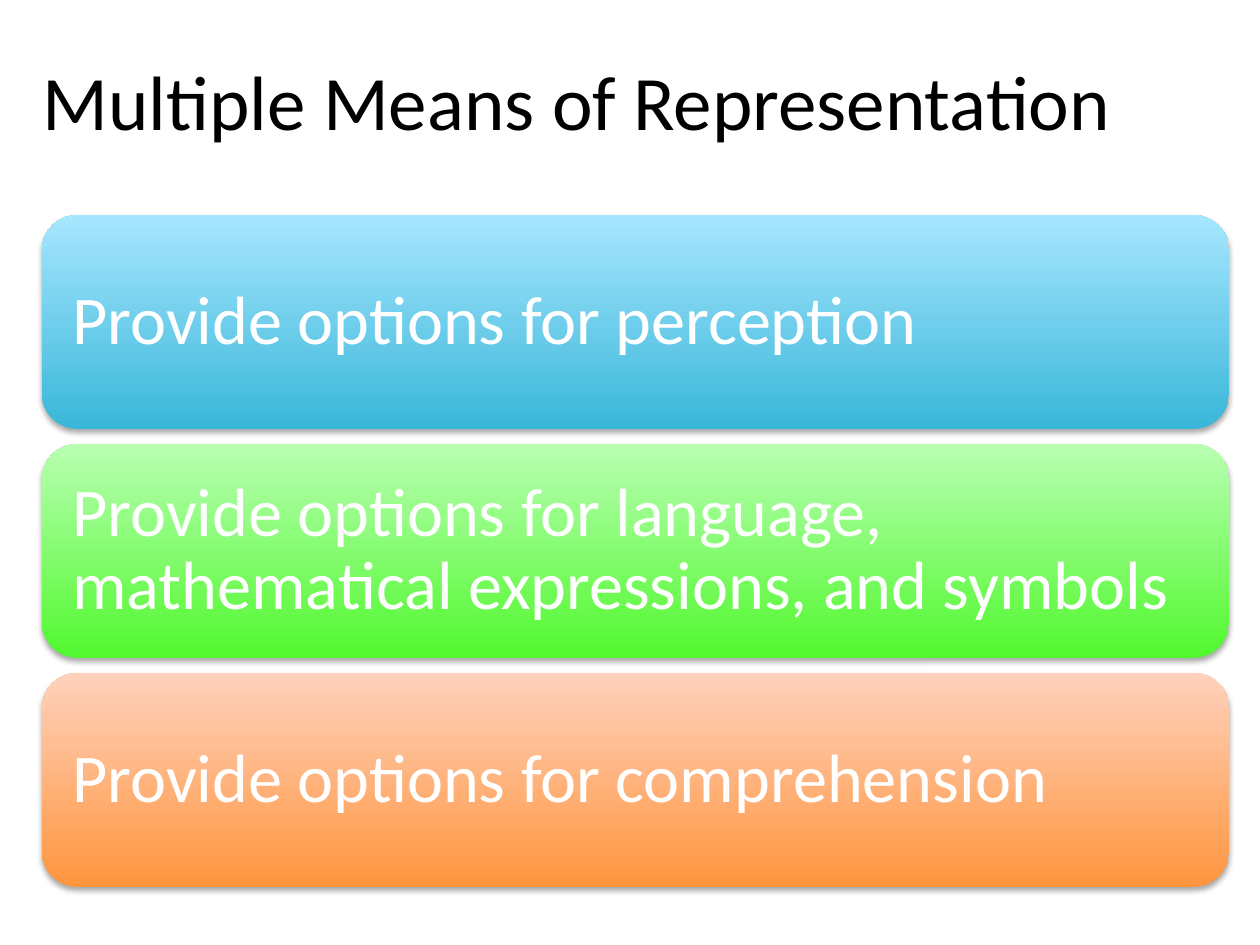
"""Build a slide with a title and three gradient option panels."""
from lxml import etree
from pptx import Presentation
from pptx import util as u
from pptx.dml.color import RGBColor
from pptx.enum import shapes, text
from pptx.oxml.ns import qn

COLORS = {
    "black": "000000",
    "white": "FFFFFF",
    "blue": ("39B7D8", "A7E6FF"),
    "green": ("51F82F", "B9FFB2"),
    "orange": ("FF953E", "FFD2BD"),
}
PANELS = [
    ("Provide options for perception", "blue"),
    ("Provide options for language, mathematical expressions, and symbols", "green"),
    ("Provide options for comprehension", "orange"),
]


def px(n):
    return u.Emu(round(n * 914400 / 126))


class Deck:
    def __init__(self, width, height, font="Calibri"):
        self.prs = Presentation()
        self.prs.slide_width, self.prs.slide_height = px(width), px(height)
        self.s = self.prs.slides.add_slide(self.prs.slide_layouts[5])
        self.font = font

    def set_text(self, tf, words, size, color, align):
        tf.word_wrap = True
        tf.auto_size = text.MSO_AUTO_SIZE.NONE
        tf.vertical_anchor = text.MSO_ANCHOR.MIDDLE
        p = tf.paragraphs[0]
        p.text = words
        p.alignment = align
        p.font.name = self.font
        p.font.size = u.Pt(size)
        p.font.color.rgb = RGBColor.from_string(COLORS[color])
        return p

    def title(self, words, x, y, w, h):
        sp = self.s.shapes.title
        sp.left, sp.top, sp.width, sp.height = map(px, (x, y, w, h))
        self.set_text(sp.text_frame, words, 44, "black", text.PP_ALIGN.CENTER)

    def shadow(self, sp):
        sp.shadow.inherit = False
        effects = sp._element.spPr.find(qn("a:effectLst"))
        outer = etree.SubElement(effects, qn("a:outerShdw"), blurRad="40000",
                                 dist="23000", dir="5400000", rotWithShape="0")
        color = etree.SubElement(outer, qn("a:srgbClr"), val=COLORS["black"])
        etree.SubElement(color, qn("a:alpha"), val="35000")

    def panel(self, words, gradient, x, y, w, h, inset=20):
        sp = self.s.shapes.add_shape(shapes.MSO_SHAPE.ROUNDED_RECTANGLE,
                                     *map(px, (x, y, w, h)))
        sp.fill.gradient()
        sp.fill.gradient_angle = 90
        for stop, color, position in zip(sp.fill.gradient_stops, COLORS[gradient], (0, 1)):
            stop.color.rgb = RGBColor.from_string(color)
            stop.position = position
        sp.line.fill.background()
        self.shadow(sp)
        tf = sp.text_frame
        tf.margin_left = tf.margin_right = tf.margin_top = tf.margin_bottom = px(inset)
        p = self.set_text(tf, words, 39, "white", text.PP_ALIGN.LEFT)
        p.line_spacing = 0.9


def main():
    deck = Deck(1260, 945)
    deck.title("Multiple Means of Representation", 10, 21, 1134, 158)
    for i, (words, gradient) in enumerate(PANELS):
        deck.panel(words, gradient, 42, 215 + 229 * i, 1187, 214)
    deck.prs.save("out.pptx")


if __name__ == "__main__":
    main()
